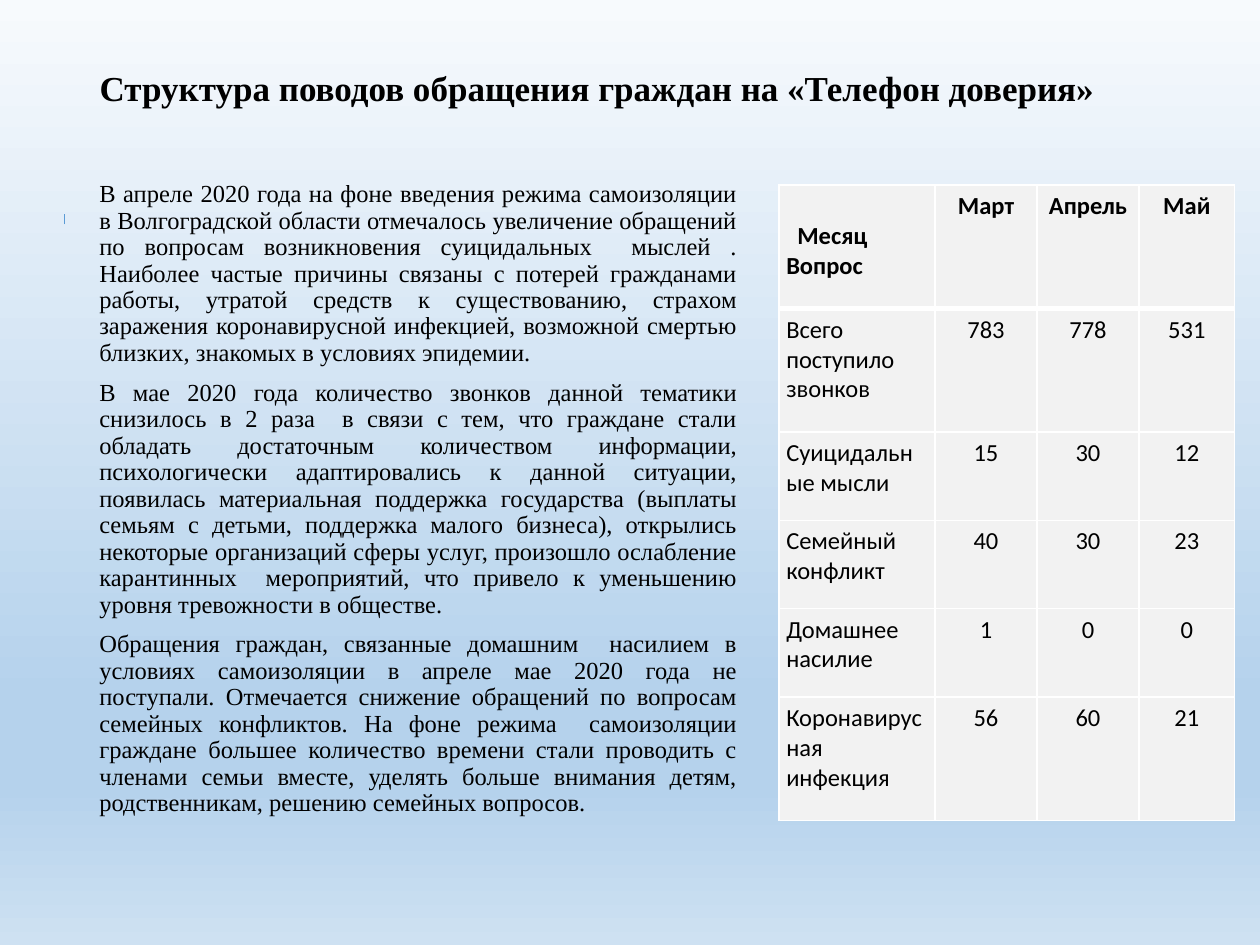
from lxml.etree import SubElement
from pptx import Presentation
from pptx.dml.color import RGBColor
from pptx.enum.shapes import MSO_CONNECTOR as Conn
from pptx.enum.text import MSO_ANCHOR as Anchor, MSO_AUTO_SIZE as AutoSize, PP_ALIGN as Align
from pptx.oxml.ns import qn
from pptx.util import Pt

TITLE = "Структура поводов обращения граждан на «Телефон доверия»"
BODY = [
    "В апреле 2020 года на фоне введения режима самоизоляции в Волгоградской "
    "области отмечалось увеличение обращений по вопросам возникновения "
    "суицидальных  мыслей . Наиболее частые причины связаны с потерей гражданами "
    "работы, утратой средств к существованию, страхом заражения коронавирусной "
    "инфекцией, возможной смертью близких, знакомых в условиях эпидемии.",
    "В мае 2020 года количество звонков данной тематики снизилось в 2 раза  в связи "
    "с тем, что граждане стали обладать достаточным количеством информации, "
    "психологически адаптировались к данной ситуации, появилась материальная "
    "поддержка государства (выплаты семьям с детьми, поддержка малого бизнеса), "
    "открылись некоторые организаций сферы услуг, произошло ослабление карантинных  "
    "мероприятий, что привело к уменьшению уровня тревожности в обществе.",
    "Обращения граждан, связанные домашним  насилием в условиях самоизоляции в "
    "апреле мае 2020 года не поступали. Отмечается снижение обращений по вопросам "
    "семейных конфликтов. На фоне режима  самоизоляции граждане большее количество "
    "времени стали проводить с членами семьи вместе, уделять больше внимания детям, "
    "родственникам, решению семейных вопросов.",
]
CALLS = [
    ["Месяц\nВопрос", "Март", "Апрель", "Май"],
    ["Всего поступило звонков", "783", "778", "531"],
    ["Суицидальные мысли", "15", "30", "12"],
    ["Семейный конфликт", "40", "30", "23"],
    ["Домашнее насилие", "1", "0", "0"],
    ["Коронавирусная инфекция", "56", "60", "21"],
]
COL_WIDTHS = [89.3, 58.3, 58.3, 54.7]
ROW_HEIGHTS = [70.6, 70.6, 50.4, 50.4, 50.4, 70.6]
BACKGROUND = [(0, "F7FAFD"), (74, "B5D2EC"), (83, "B5D2EC"), (100, "CEE1F2")]
SERIF, SANS = "Times New Roman", "Calibri"


def rgb(value):
    """Turn a hex string into a colour."""
    return RGBColor.from_string(value)


def add_text(p, text, font, size, bold=False, align=Align.LEFT):
    """Add one black run to a paragraph and align it."""
    p.alignment = align
    r = p.add_run()
    r.text = text
    r.font.name, r.font.size, r.font.bold = font, Pt(size), bold
    r.font.color.rgb = rgb("000000")


def set_background(s, stops):
    """Fill the slide with a vertical gradient."""
    fill = s.background.fill
    fill.gradient()
    fill.gradient_angle = 270
    stop_list = next(s.element.iter(qn("a:gsLst")))
    for old in list(stop_list):
        stop_list.remove(old)
    for position, value in stops:
        stop = SubElement(stop_list, qn("a:gs"), pos=str(position * 1000))
        SubElement(stop, qn("a:srgbClr"), val=value)


def set_title(s, text):
    """Place and format the title placeholder."""
    sp = s.shapes.title
    sp.left, sp.top, sp.width, sp.height = Pt(49.7), Pt(36), Pt(627.8), Pt(30.2)
    tf = sp.text_frame
    tf.word_wrap, tf.auto_size, tf.vertical_anchor = True, AutoSize.NONE, Anchor.BOTTOM
    p = tf.paragraphs[0]
    p.line_spacing = 0.9
    add_text(p, text, SERIF, 20, bold=True)


def add_body(s, texts):
    """Add the justified paragraphs on the left."""
    sp = s.shapes.add_textbox(Pt(49.7), Pt(100.1), Pt(378.7), Pt(425.5))
    tf = sp.text_frame
    tf.word_wrap = True
    for i, text in enumerate(texts):
        p = tf.add_paragraph() if i else tf.paragraphs[0]
        p.line_spacing, p.space_before = 0.9, Pt(7.5)
        add_text(p, text, SERIF, 14, align=Align.JUSTIFY)


def set_borders(cell, **widths):
    """Draw white cell borders, given as side and width."""
    tc_pr = cell._tc.get_or_add_tcPr()
    for side, width in widths.items():
        ln = SubElement(tc_pr, qn(f"a:ln{side}"), w=str(Pt(width)))
        fill = SubElement(ln, qn("a:solidFill"))
        SubElement(fill, qn("a:srgbClr"), val="FFFFFF")


def fill_cell(cell, text, header, align):
    """Format one table cell and write its lines."""
    set_borders(cell, L=1, R=1, T=1, B=3 if header else 1)
    cell.fill.solid()
    cell.fill.fore_color.rgb = rgb("F2F2F2")
    cell.margin_left = cell.margin_right = Pt(4.3)
    cell.margin_top = cell.margin_bottom = Pt(3.6)
    tf = cell.text_frame
    for i, line in enumerate(text.split("\n")):
        p = tf.add_paragraph() if i else tf.paragraphs[0]
        add_text(p, line, SANS, 14, header, align)


def add_calls_table(s, rows):
    """Add the table of calls by month."""
    frame = s.shapes.add_table(len(rows), len(rows[0]), Pt(445), Pt(105.8),
                               Pt(sum(COL_WIDTHS)), Pt(sum(ROW_HEIGHTS)))
    table = frame.table
    for column, width in zip(table.columns, COL_WIDTHS):
        column.width = Pt(width)
    for i, (row, height) in enumerate(zip(table.rows, ROW_HEIGHTS)):
        row.height = Pt(height)
        for j, cell in enumerate(row.cells):
            fill_cell(cell, rows[i][j], i == 0, Align.CENTER if j else Align.LEFT)
    corner = table.cell(0, 0)
    corner.margin_top = Pt(20.5)
    corner.text_frame.paragraphs[0]._p.get_or_add_pPr().set("marL", str(Pt(6.3)))


def add_line(s, x1, y1, x2, y2, color, width):
    """Add a straight line without shadow."""
    line = s.shapes.add_connector(Conn.STRAIGHT, Pt(x1), Pt(y1), Pt(x2), Pt(y2))
    line.line.color.rgb, line.line.width = rgb(color), Pt(width)
    SubElement(line._element.spPr, qn("a:effectLst"))


def main():
    """Build the slide and save it."""
    prs = Presentation()
    prs.slide_width, prs.slide_height = Pt(720), Pt(540)
    s = prs.slides.add_slide(prs.slide_layouts[5])
    set_background(s, BACKGROUND)
    set_title(s, TITLE)
    add_calls_table(s, CALLS)
    add_body(s, BODY)
    add_line(s, 36.7, 128.2, 36.7, 122.4, "5B9BD5", 0.5)
    prs.save("out.pptx")


if __name__ == "__main__":
    main()
